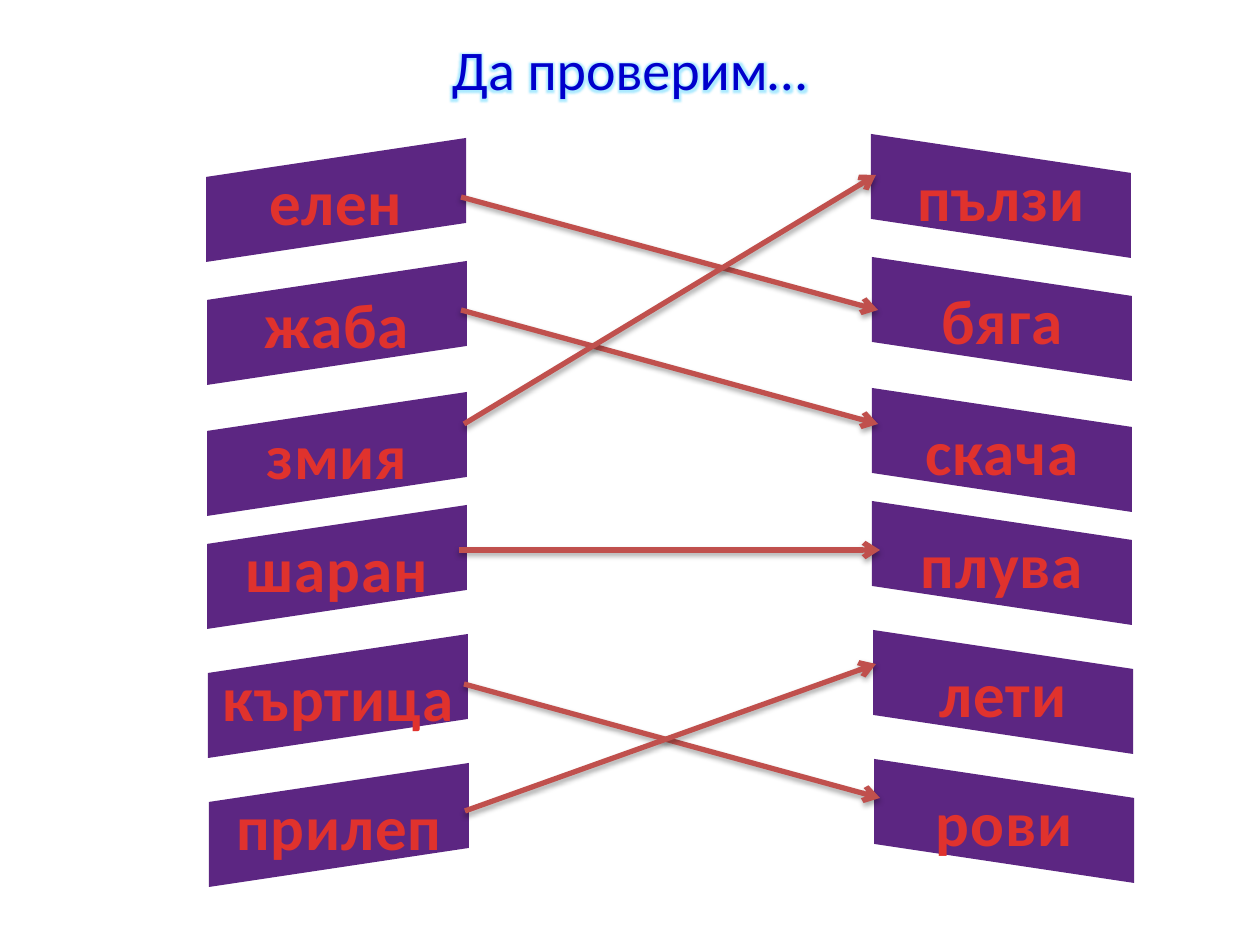
from lxml import etree
from pptx import Presentation
from pptx.dml.color import RGBColor
from pptx.enum.shapes import MSO_CONNECTOR
from pptx.enum.text import MSO_ANCHOR, PP_ALIGN
from pptx.oxml import parse_xml
from pptx.oxml.ns import nsdecls, qn
from pptx.util import Pt

STRAIGHT = MSO_CONNECTOR.STRAIGHT
MIDDLE = MSO_ANCHOR.MIDDLE
CENTER = PP_ALIGN.CENTER

SCALE = 914400 / 126
FONT = "Calibri"
COLORS = {
    "title": "0000CC",
    "glow": "33CCFF",
    "card": "5C2682",
    "word_top": "E0322D",
    "word_bottom": "A2201C",
    "arrow": "C0504D",
    "shadow": "000000",
}

ANIMALS = ["елен", "жаба", "змия", "шаран", "къртица", "прилеп"]
ACTIONS = ["пълзи", "бяга", "скача", "плува", "лети", "рови"]
ROW_OFFSETS = [(0, 0), (1, 123), (1, 254), (1, 367), (2, 496), (3, 625)]
CARD_WIDTH, CARD_HEIGHT, CARD_SLANT = 260, 124, 39
ARROWS = [
    (461, 197, 878, 310),
    (461, 310, 878, 424),
    (459, 550, 880, 550),
    (464, 684, 880, 798),
    (464, 424, 876, 175),
    (465, 811, 876, 664),
]


def px(length):
    return round(length * SCALE)


def rgb(name):
    return RGBColor.from_string(COLORS[name])


def format_title(title, left, top, width, height):
    title.left, title.top = px(left), px(top)
    title.width, title.height = px(width), px(height)
    frame = title.text_frame
    frame.text = "Да проверим…"
    frame.vertical_anchor = MIDDLE
    para = frame.paragraphs[0]
    para.alignment = CENTER
    font = para.runs[0].font
    font.name, font.size = FONT, Pt(32)
    font.color.rgb = rgb("title")
    glow = parse_xml(
        f'<a:effectLst {nsdecls("a")}><a:glow rad="63500">'
        f'<a:srgbClr val="{COLORS["glow"]}"><a:alpha val="40000"/></a:srgbClr>'
        "</a:glow></a:effectLst>"
    )
    para.runs[0]._r.rPr.find(qn("a:solidFill")).addnext(glow)


def add_card(page, word, left, top, rises):
    """Add a slanted card whose right side is higher if it rises, else lower."""
    right = left + CARD_WIDTH
    bottom = top + CARD_HEIGHT
    left_drop, right_drop = (CARD_SLANT, 0) if rises else (0, CARD_SLANT)
    builder = page.shapes.build_freeform(left, top + left_drop, scale=SCALE)
    builder.add_line_segments([
        (right, top + right_drop),
        (right, bottom - left_drop),
        (left, bottom - right_drop),
    ])
    card = builder.convert_to_shape()
    card.shadow.inherit = False
    card.fill.solid()
    card.fill.fore_color.rgb = rgb("card")
    card.line.fill.background()

    frame = card.text_frame
    frame.text = word
    frame.word_wrap = False
    frame.vertical_anchor = MIDDLE
    para = frame.paragraphs[0]
    para.alignment = CENTER
    font = para.runs[0].font
    font.name, font.size, font.bold = FONT, Pt(36), True
    font.fill.gradient()
    font.fill.gradient_angle = 270
    stops = zip(font.fill.gradient_stops, ("word_top", "word_bottom"), (0.25, 1))
    for stop, color, position in stops:
        stop.color.rgb = rgb(color)
        stop.position = position
    para.runs[0]._r.rPr.set("spc", "50")


def add_column(page, words, left, top, rises):
    for word, (shift, drop) in zip(words, ROW_OFFSETS):
        add_card(page, word, left + shift, top + drop, rises)


def add_arrow(page, *ends):
    arrow = page.shapes.add_connector(STRAIGHT, *map(px, ends))
    arrow.line.color.rgb = rgb("arrow")
    arrow.line.width = Pt(3)
    etree.SubElement(arrow.line._get_or_add_ln(), qn("a:tailEnd"), type="arrow")
    arrow._element.spPr.append(parse_xml(
        f'<a:effectLst {nsdecls("a")}>'
        '<a:outerShdw blurRad="40000" dist="23000" dir="5400000" rotWithShape="0">'
        f'<a:srgbClr val="{COLORS["shadow"]}"><a:alpha val="35000"/></a:srgbClr>'
        "</a:outerShdw></a:effectLst>"
    ))


def main():
    deck = Presentation()
    deck.slide_width, deck.slide_height = px(1260), px(945)
    page = deck.slides.add_slide(deck.slide_layouts[5])
    format_title(page.shapes.title, 21, 16, 1217, 105)
    add_column(page, ANIMALS, 206, 138, rises=True)
    add_column(page, ACTIONS, 871, 134, rises=False)
    for ends in ARROWS:
        add_arrow(page, *ends)
    deck.save("out.pptx")


if __name__ == "__main__":
    main()
